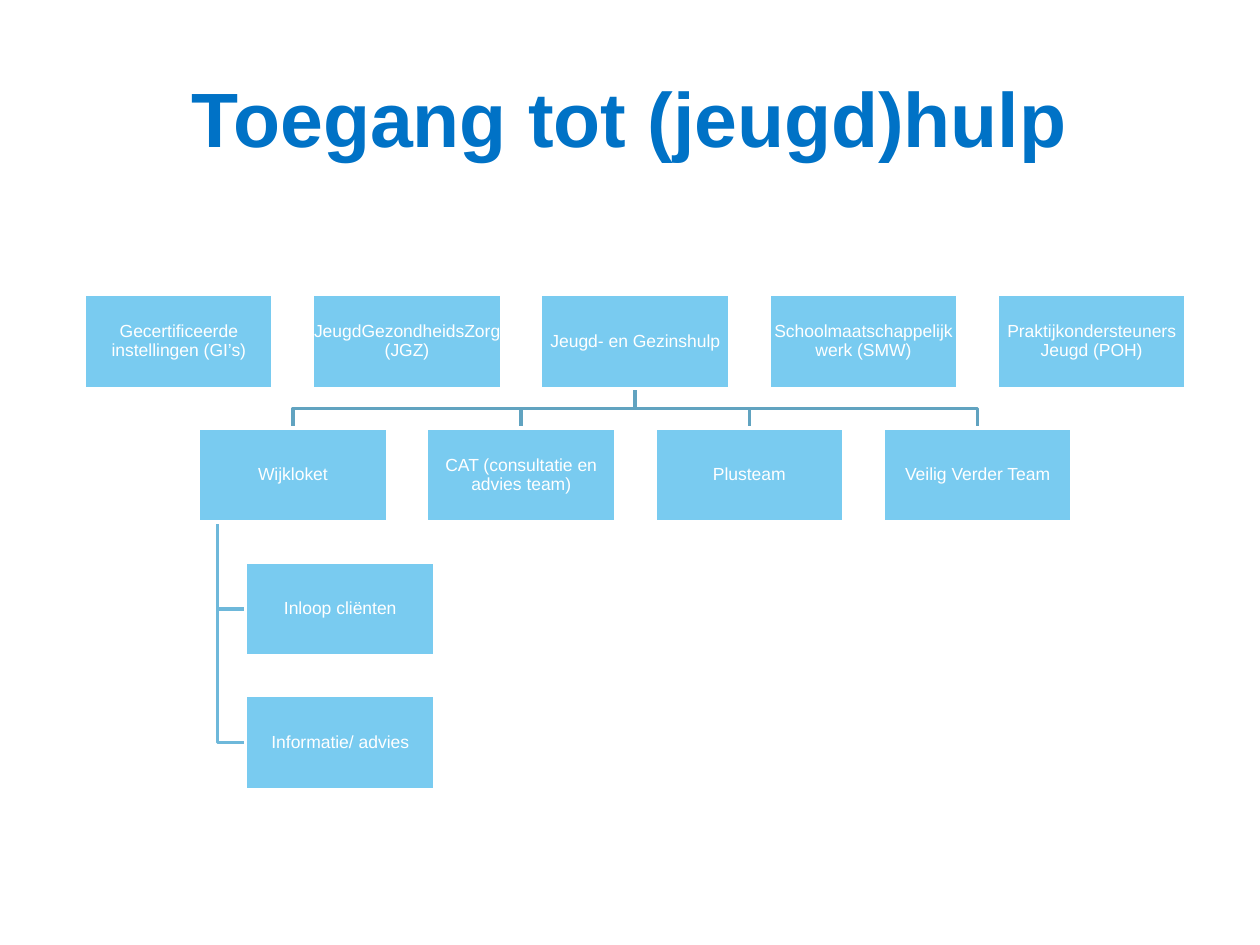
from pptx import Presentation
from pptx.dml.color import RGBColor
from pptx.enum.shapes import MSO_SHAPE
from pptx.enum.text import MSO_ANCHOR, PP_ALIGN
from pptx.util import Pt

RECTANGLE = MSO_SHAPE.RECTANGLE
MIDDLE = MSO_ANCHOR.MIDDLE
CENTER = PP_ALIGN.CENTER

TITLE_BLUE = RGBColor(0x00, 0x72, 0xC6)
BOX_BLUE = RGBColor(0x79, 0xCB, 0xF0)
BRANCH_BLUE = RGBColor(0x61, 0xA3, 0xC0)
LEAF_BLUE = RGBColor(0x6E, 0xB8, 0xDA)
WHITE = RGBColor(0xFF, 0xFF, 0xFF)

# Grid of the chart, in points
LEFT, TOP = 48.2, 168.3
BOX_WIDTH, BOX_HEIGHT = 108, 53.8
COLUMN_STEP, ROW_STEP = 130.4, 76.4
TEAM_LEFT = LEFT + COLUMN_STEP / 2
LEAF_LEFT = TEAM_LEFT + BOX_WIDTH / 4
SPINE_X = TEAM_LEFT + BOX_WIDTH / 10

PARTNERS = [
    "Gecertificeerde instellingen (GI’s)",
    "JeugdGezondheidsZorg (JGZ)",
    "Jeugd- en Gezinshulp",
    "Schoolmaatschappelijk werk (SMW)",
    "Praktijkondersteuners Jeugd (POH)",
]
TEAMS = ["Wijkloket", "CAT (consultatie en advies team)", "Plusteam", "Veilig Verder Team"]
LEAVES = ["Inloop cliënten", "Informatie/ advies"]

presentation = Presentation()
presentation.slide_width, presentation.slide_height = Pt(720), Pt(540)
slide = presentation.slides.add_slide(presentation.slide_layouts[6])


def write_text(shape, text, *, size, color, bold=False, spacing=1.0, inset=0.72):
    frame = shape.text_frame
    frame.word_wrap = True
    frame.vertical_anchor = MIDDLE
    frame.margin_left = frame.margin_right = Pt(inset)
    frame.margin_top = frame.margin_bottom = Pt(inset)
    paragraph = frame.paragraphs[0]
    paragraph.text = text
    paragraph.alignment = CENTER
    paragraph.line_spacing = spacing
    paragraph.font.name = "Arial"
    paragraph.font.size = Pt(size)
    paragraph.font.bold = bold
    paragraph.font.color.rgb = color


def draw_elbow(points, color):
    corners = [(Pt(x), Pt(y)) for x, y in points]
    builder = slide.shapes.build_freeform(*corners[0])
    builder.add_line_segments(corners[1:], close=False)
    shape = builder.convert_to_shape()
    shape.shadow.inherit = False
    shape.fill.background()
    shape.line.color.rgb = color
    shape.line.width = Pt(2)


# Title
title = slide.shapes.add_textbox(Pt(36), Pt(21.6), Pt(648), Pt(90))
write_text(title, "Toegang tot (jeugd)hulp", size=44, color=TITLE_BLUE, bold=True, inset=3.6)

# Branches from the middle partner to the teams
trunk_x = LEFT + 2 * COLUMN_STEP + BOX_WIDTH / 2
trunk_y = TOP + BOX_HEIGHT
team_top = TOP + ROW_STEP
bar_y = (trunk_y + team_top) / 2
for column in range(len(TEAMS)):
    team_x = TEAM_LEFT + column * COLUMN_STEP + BOX_WIDTH / 2
    draw_elbow([(trunk_x, trunk_y), (trunk_x, bar_y), (team_x, bar_y), (team_x, team_top)],
               BRANCH_BLUE)

# Branches from the first team to its services
for row in range(len(LEAVES)):
    leaf_y = TOP + (row + 2) * ROW_STEP + BOX_HEIGHT / 2
    draw_elbow([(SPINE_X, team_top + BOX_HEIGHT), (SPINE_X, leaf_y), (LEAF_LEFT, leaf_y)],
               LEAF_BLUE)

# Boxes
boxes = [(text, LEFT + i * COLUMN_STEP, TOP) for i, text in enumerate(PARTNERS)]
boxes += [(text, TEAM_LEFT + i * COLUMN_STEP, team_top) for i, text in enumerate(TEAMS)]
boxes += [(text, LEAF_LEFT, TOP + (i + 2) * ROW_STEP) for i, text in enumerate(LEAVES)]
for text, left, top in boxes:
    box = slide.shapes.add_shape(RECTANGLE, Pt(left), Pt(top), Pt(BOX_WIDTH), Pt(BOX_HEIGHT))
    box.shadow.inherit = False
    box.fill.solid()
    box.fill.fore_color.rgb = BOX_BLUE
    box.line.color.rgb = WHITE
    box.line.width = Pt(2)
    write_text(box, text, size=10, color=WHITE, spacing=0.9)

presentation.save("out.pptx")
